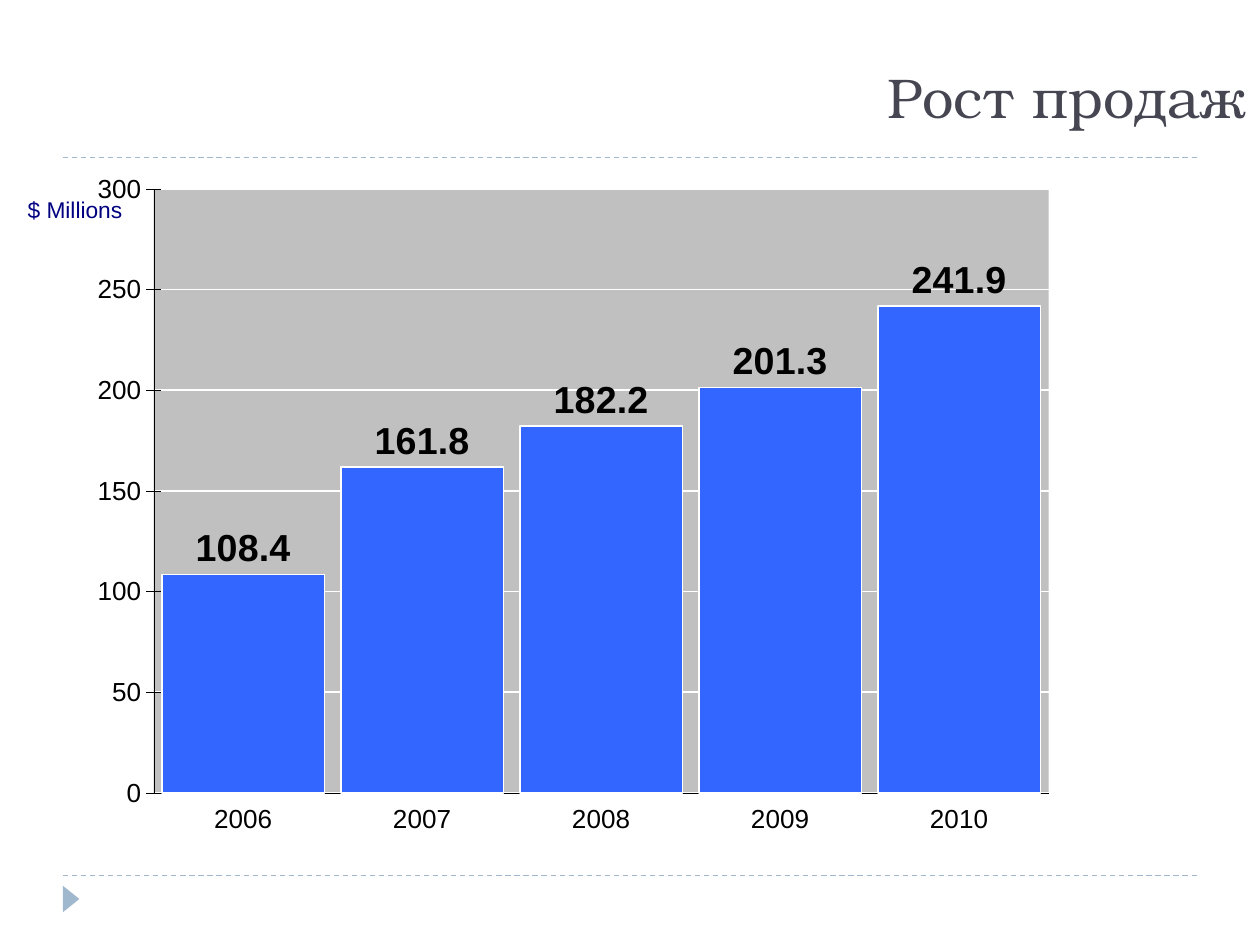
from dataclasses import dataclass

from lxml import etree
from pptx import Presentation
from pptx.chart.data import CategoryChartData
from pptx.dml.color import RGBColor
from pptx.enum.chart import XL_CHART_TYPE, XL_LABEL_POSITION, XL_TICK_LABEL_POSITION, XL_TICK_MARK
from pptx.enum.dml import MSO_LINE
from pptx.enum.shapes import MSO_CONNECTOR, MSO_SHAPE
from pptx.enum.text import MSO_ANCHOR, MSO_AUTO_SIZE, PP_ALIGN
from pptx.oxml import parse_xml
from pptx.oxml.ns import nsdecls, qn
from pptx.util import Pt

COLUMN = XL_CHART_TYPE.COLUMN_CLUSTERED
OUTSIDE_END = XL_LABEL_POSITION.OUTSIDE_END
LABELS_LOW = XL_TICK_LABEL_POSITION.LOW
TICK_NONE, TICK_CROSS = XL_TICK_MARK.NONE, XL_TICK_MARK.CROSS
DASH = MSO_LINE.DASH
STRAIGHT = MSO_CONNECTOR.STRAIGHT
TRIANGLE = MSO_SHAPE.ISOSCELES_TRIANGLE
TOP, BOTTOM = MSO_ANCHOR.TOP, MSO_ANCHOR.BOTTOM
LEFT, RIGHT = PP_ALIGN.LEFT, PP_ALIGN.RIGHT
FIT_SHAPE, FIT_NONE = MSO_AUTO_SIZE.SHAPE_TO_FIT_TEXT, MSO_AUTO_SIZE.NONE


@dataclass(frozen=True)
class Theme:
    title_font: str = "TeX Gyre Bonum"
    body_font: str = "Arial"
    title_size: float = 32
    unit_size: float = 13
    axis_size: float = 14.9
    value_size: float = 21.5
    title_color: str = "464653"
    unit_color: str = "000080"
    accent: str = "9FB8CD"
    ink: str = "000000"
    bar: str = "3366FF"
    outline: str = "FFFFFF"
    plot: str = "C0C0C0"


class SlideBuilder:
    def __init__(self, slide, theme):
        self.slide = slide
        self.theme = theme

    @staticmethod
    def style_font(font, name, size, color, bold=False):
        font.name, font.size, font.bold = name, Pt(size), bold
        font.color.rgb = RGBColor.from_string(color)

    @staticmethod
    def style_line(line, color, width):
        line.color.rgb = RGBColor.from_string(color)
        line.width = Pt(width)

    def dashed_rule(self, left, right, y):
        rule = self.slide.shapes.add_connector(STRAIGHT, Pt(left), Pt(y), Pt(right), Pt(y))
        self.style_line(rule.line, self.theme.accent, 0.75)
        rule.line.dash_style = DASH
        etree.SubElement(rule._element.spPr, qn("a:effectLst"))

    def marker(self, left, top, width, height):
        """Add a triangle pointing right; the box is given before rotation."""
        shape = self.slide.shapes.add_shape(TRIANGLE, Pt(left), Pt(top), Pt(width), Pt(height))
        shape.rotation = 90
        shape.shadow.inherit = False
        shape.fill.solid()
        shape.fill.fore_color.rgb = RGBColor.from_string(self.theme.accent)
        shape.line.fill.background()

    def text(self, words, box, font, size, color, align=LEFT, anchor=TOP, inset=(0, 0), wrap=False):
        frame = self.slide.shapes.add_textbox(*map(Pt, box)).text_frame
        frame.margin_left = frame.margin_right = Pt(inset[0])
        frame.margin_top = frame.margin_bottom = Pt(inset[1])
        frame.word_wrap = wrap
        frame.auto_size = FIT_NONE if wrap else FIT_SHAPE
        frame.vertical_anchor = anchor
        paragraph = frame.paragraphs[0]
        paragraph.text = words
        paragraph.alignment = align
        self.style_font(paragraph.font, font, size, color)

    def column_chart(self, box, categories, values, plot_layout):
        theme = self.theme
        data = CategoryChartData()
        data.categories = categories
        data.add_series("Series 1", values)
        chart = self.slide.shapes.add_chart(COLUMN, *map(Pt, box), data).chart
        chart.has_legend = chart.has_title = False
        self.style_font(chart.font, theme.body_font, theme.value_size, theme.ink, True)

        plot = chart.plots[0]
        plot.gap_width, plot.overlap = 10, 100
        plot.vary_by_categories = False
        series = plot.series[0]
        series.format.fill.solid()
        series.format.fill.fore_color.rgb = RGBColor.from_string(theme.bar)
        self.style_line(series.format.line, theme.outline, 0.93)
        labels = series.data_labels
        labels.show_value = True
        labels.position = OUTSIDE_END
        self.style_font(labels.font, theme.body_font, theme.value_size, theme.ink, True)

        for axis, tick in ((chart.category_axis, TICK_NONE), (chart.value_axis, TICK_CROSS)):
            axis.major_tick_mark, axis.minor_tick_mark = tick, TICK_NONE
            self.style_line(axis.format.line, theme.ink, 0.23)
            self.style_font(axis.tick_labels.font, theme.body_font, theme.axis_size, theme.ink)
        chart.category_axis.tick_label_position = LABELS_LOW
        value_axis = chart.value_axis
        value_axis.minimum_scale, value_axis.maximum_scale, value_axis.major_unit = 0, 300, 50
        self.style_line(value_axis.major_gridlines.format.line, theme.outline, 0.93)
        self.style_plot_area(chart, plot_layout)

    def style_plot_area(self, chart, plot_layout):
        """Place the inner plot area by fractions of the chart and fill it."""
        area = chart._chartSpace.chart.plotArea
        for old_layout in area.findall(qn("c:layout")):
            area.remove(old_layout)
        modes = '<c:xMode val="edge"/><c:yMode val="edge"/>'
        places = "".join(f'<c:{key} val="{value}"/>' for key, value in zip("xywh", plot_layout))
        area.insert(0, parse_xml(
            f'<c:layout {nsdecls("c")}><c:manualLayout><c:layoutTarget val="inner"/>'
            f'{modes}{places}</c:manualLayout></c:layout>'))
        area.append(parse_xml(
            f'<c:spPr {nsdecls("c", "a")}><a:solidFill><a:srgbClr val="{self.theme.plot}"/>'
            '</a:solidFill><a:ln><a:noFill/></a:ln></c:spPr>'))


def main():
    presentation = Presentation()
    presentation.slide_width, presentation.slide_height = Pt(720), Pt(540)
    theme = Theme()
    builder = SlideBuilder(presentation.slides.add_slide(presentation.slide_layouts[6]), theme)

    for y in (500.4, 90):
        builder.dashed_rule(36, 684, y)
    builder.marker(33.1, 509, 15.1, 9.4)
    builder.text("$ Millions", (15.8, 111.6, 54, 15.8),
                 theme.body_font, theme.unit_size, theme.unit_color)
    builder.column_chart((41, 87.1, 564.5, 409), ("2006", "2007", "2008", "2009", "2010"),
                         (108.4, 161.8, 182.2, 201.3, 241.9), (0.083, 0.051, 0.906, 0.844))
    builder.text("Рост продаж", (0, 0, 720, 77.8), theme.title_font, theme.title_size,
                 theme.title_color, RIGHT, BOTTOM, inset=(7.2, 3.6), wrap=True)
    presentation.save("out.pptx")


if __name__ == "__main__":
    main()
